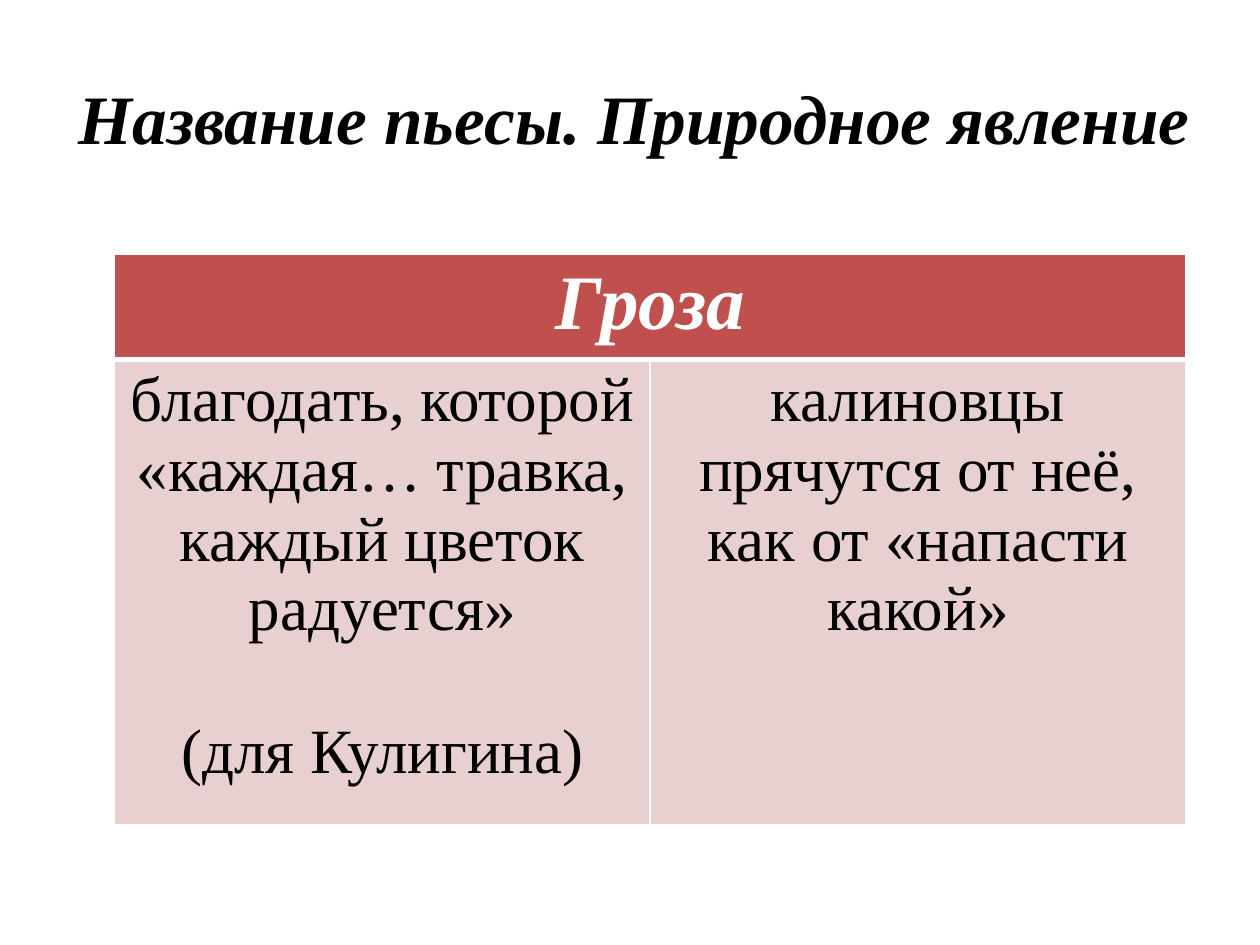
from lxml.etree import SubElement
from pptx import Presentation
from pptx.dml.color import RGBColor
from pptx.enum.text import MSO_ANCHOR as Anchor, PP_ALIGN as Align
from pptx.oxml.ns import qn
from pptx.util import Inches, Pt

# Content
TITLE = "Название пьесы. Природное явление"
HEADER = "Гроза"
VIEWS = [
    ["благодать, которой «каждая… травка, каждый цветок радуется»",
     "(для Кулигина)"],
    ["калиновцы прячутся от неё, как от «напасти какой»"],
]

# Formats
FONT = "Times New Roman"
TITLE_FORMAT = {"size": Pt(39.6), "bold": True, "italic": True}
HEADER_FORMAT = {"size": Pt(44), "bold": True, "italic": True}
VIEW_FORMAT = {"size": Pt(36), "bold": False, "italic": False}
PARAGRAPH_GAP = Pt(41.4)  # one line of the 36 pt text
COLUMN_WIDTH = 4.25
ROW_HEIGHTS = [0.7, 3.69]


def rgb(value):
    return RGBColor.from_string(value)


def write(frame, texts, formats, color):
    for index, text in enumerate(texts):
        para = frame.paragraphs[0] if index == 0 else frame.add_paragraph()
        para.alignment = Align.CENTER
        if index:
            para.space_before = PARAGRAPH_GAP
        span = para.add_run()
        span.text = text
        span.font.name = FONT
        span.font.color.rgb = rgb(color)
        for name, value in formats.items():
            setattr(span.font, name, value)


def style_cell(cell, fill, top, bottom):
    cell.fill.solid()
    cell.fill.fore_color.rgb = rgb(fill)
    properties = cell._tc.get_or_add_tcPr()
    widths = {"lnL": 1, "lnR": 1, "lnT": top, "lnB": bottom}
    for position, (side, width) in enumerate(widths.items()):
        line = SubElement(properties, qn(f"a:{side}"), w=str(Pt(width)))
        paint = SubElement(line, qn("a:solidFill"))
        SubElement(paint, qn("a:srgbClr"), val="FFFFFF")
        properties.insert(position, line)  # borders come before the fill


deck = Presentation()
deck.slide_width, deck.slide_height = Inches(10), Inches(7.5)
page = deck.slides.add_slide(deck.slide_layouts[6])

# Title
box = page.shapes.add_textbox(Inches(0.35), Inches(0.3), Inches(9.37), Inches(1.25))
box.text_frame.word_wrap = True
box.text_frame.vertical_anchor = Anchor.MIDDLE
write(box.text_frame, [TITLE], TITLE_FORMAT, "000000")

# Table with one header over both views
table = page.shapes.add_table(
    len(ROW_HEIGHTS), len(VIEWS), Inches(0.91), Inches(2.02),
    Inches(COLUMN_WIDTH * len(VIEWS)), Inches(sum(ROW_HEIGHTS))).table
for row, height in zip(table.rows, ROW_HEIGHTS):
    row.height = Inches(height)
for column, texts in enumerate(VIEWS):
    table.columns[column].width = Inches(COLUMN_WIDTH)
    style_cell(table.cell(0, column), "C0504D", 1, 3)
    style_cell(table.cell(1, column), "E8D0D0", 3, 1)
    write(table.cell(1, column).text_frame, texts, VIEW_FORMAT, "000000")
table.cell(0, 0).merge(table.cell(0, len(VIEWS) - 1))
write(table.cell(0, 0).text_frame, [HEADER], HEADER_FORMAT, "FFFFFF")

deck.save("out.pptx")
